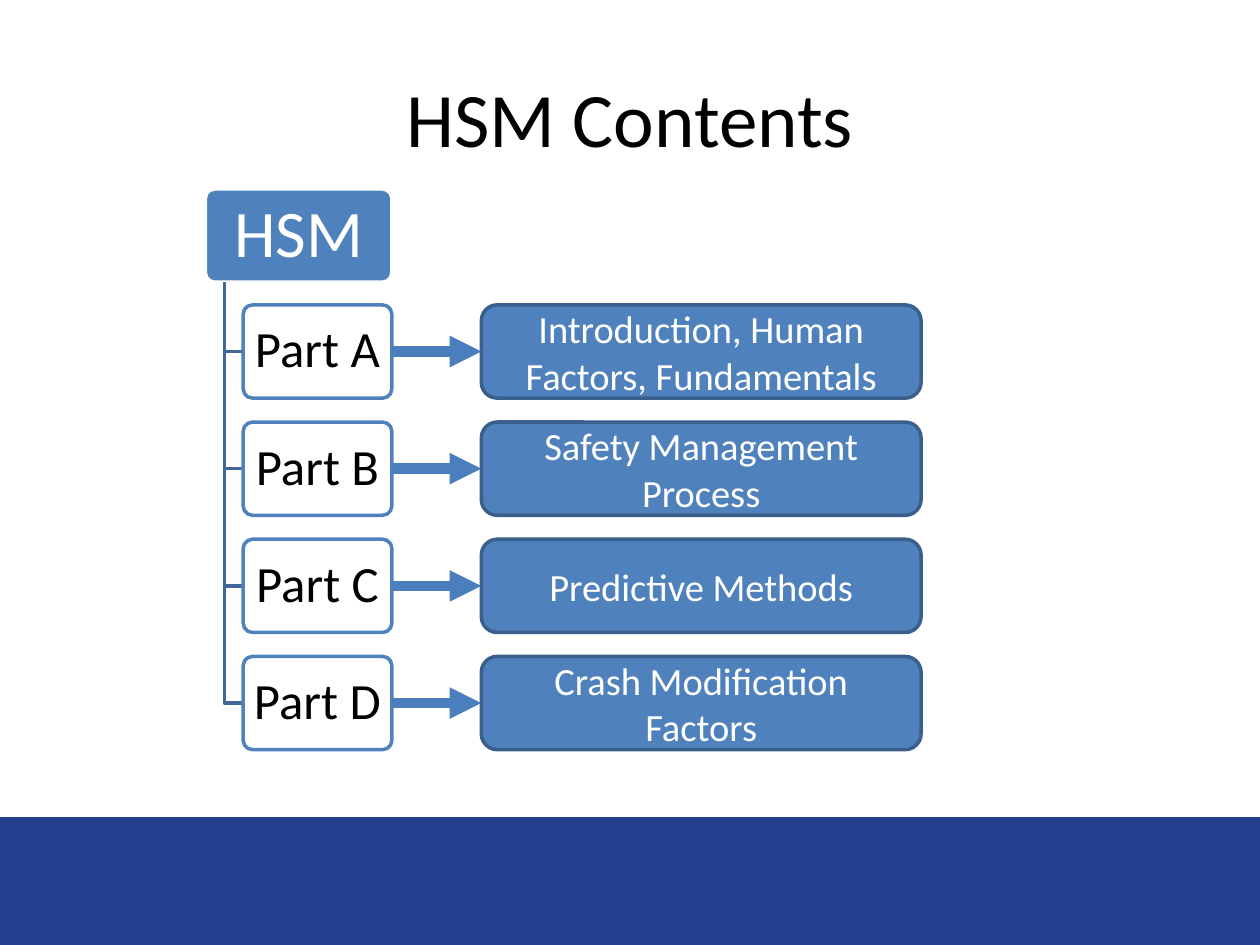
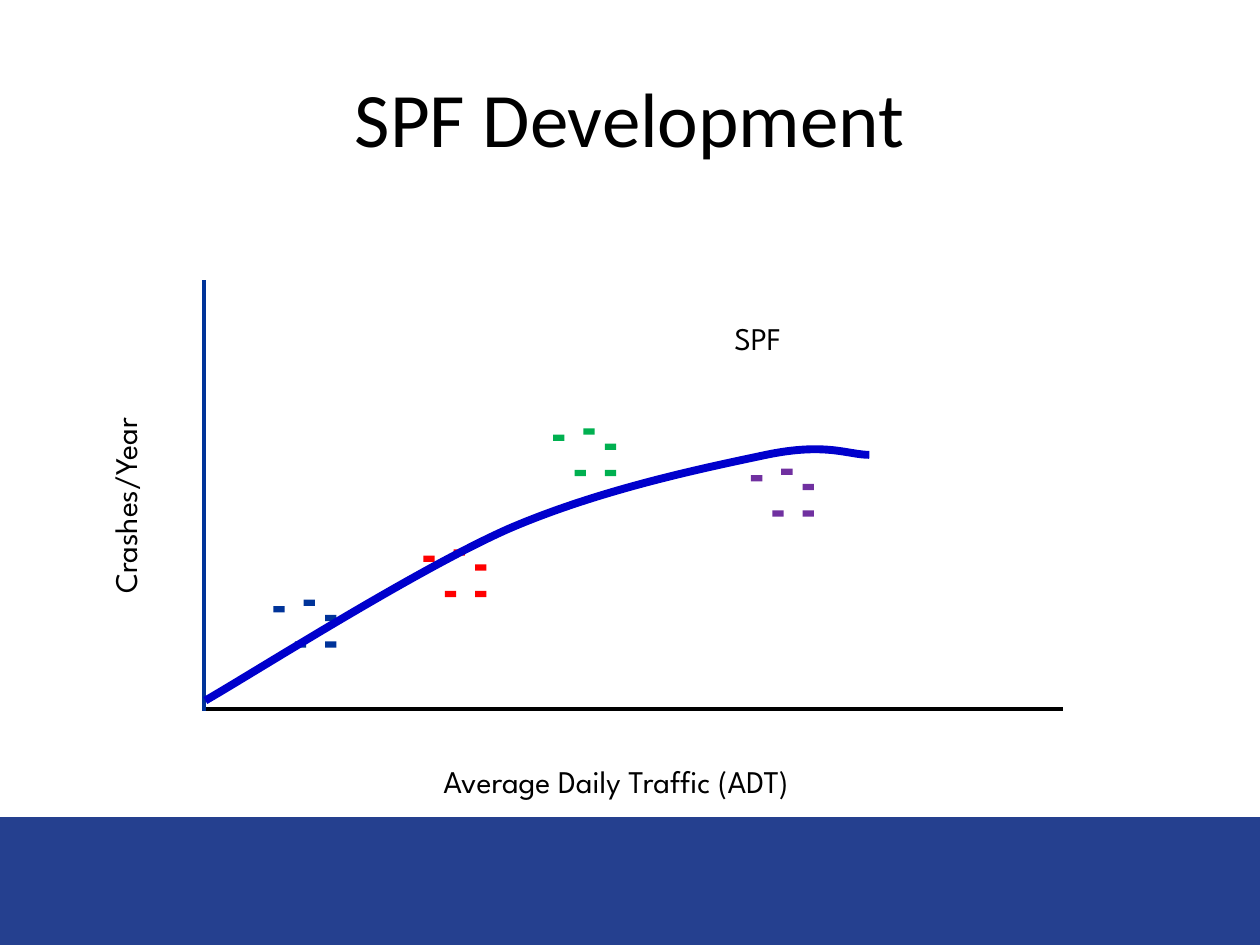
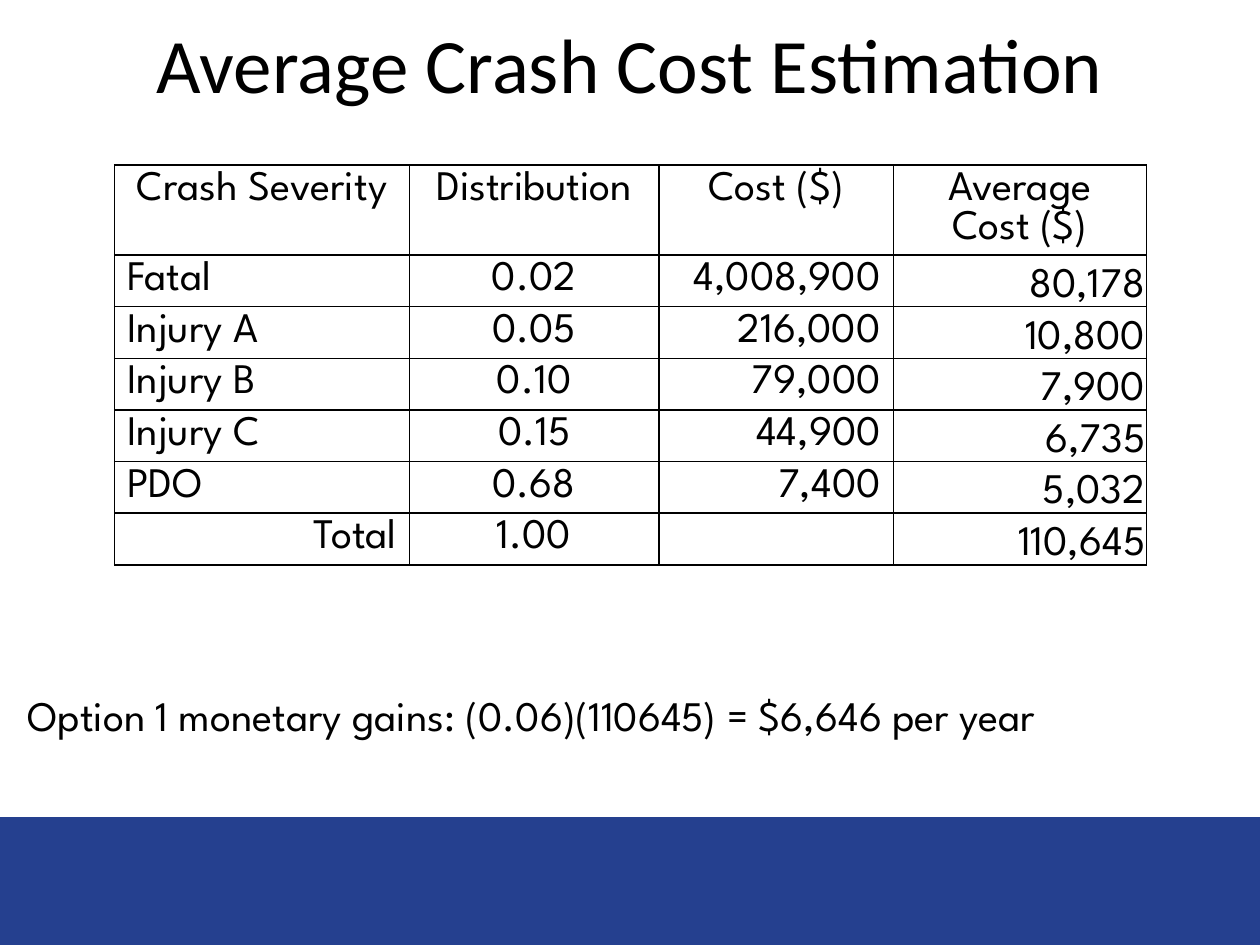
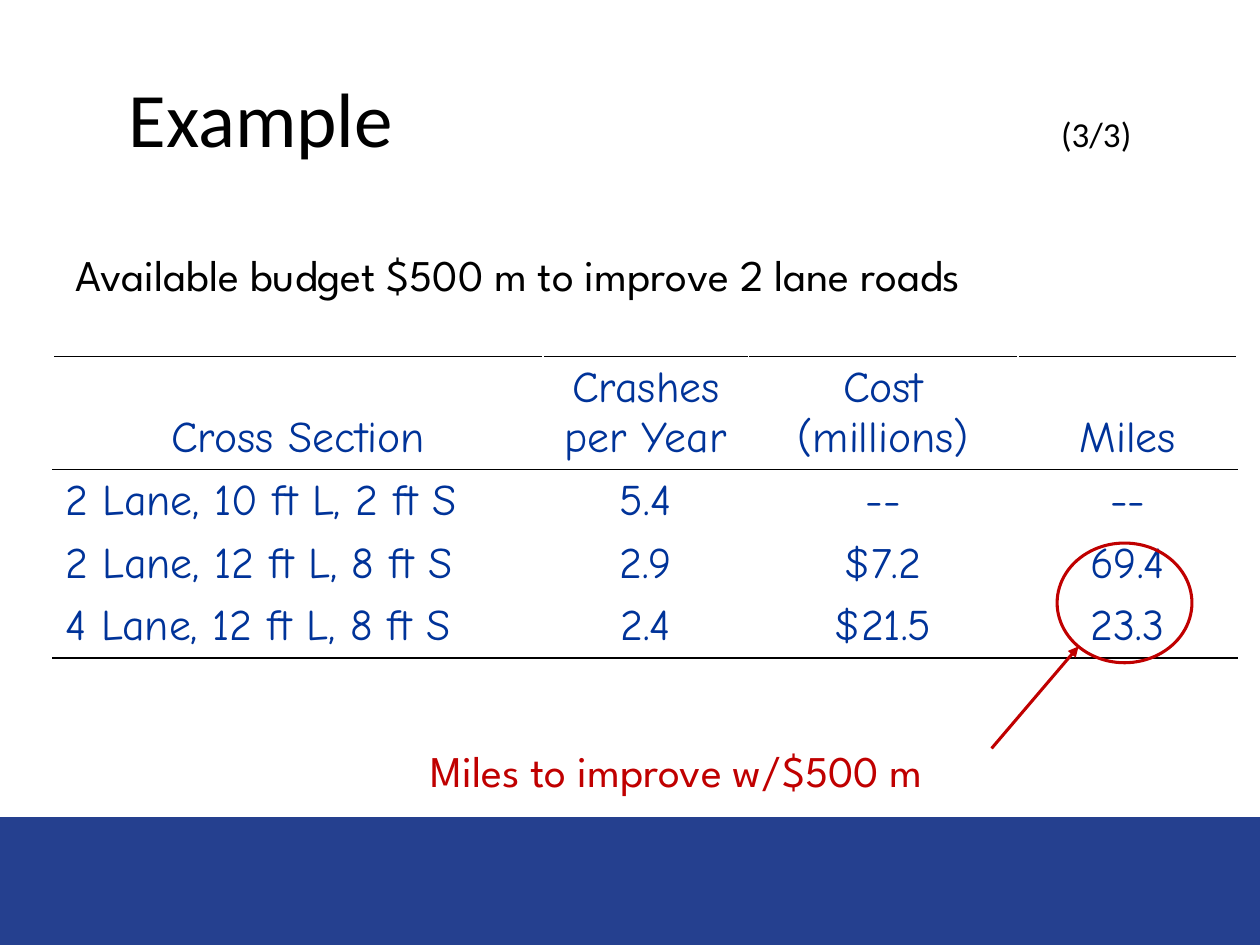
from dataclasses import dataclass
from itertools import accumulate

from lxml.etree import SubElement
from pptx import Presentation
from pptx.dml.color import RGBColor
from pptx.enum.shapes import MSO_CONNECTOR, MSO_SHAPE
from pptx.enum.text import MSO_ANCHOR, MSO_AUTO_SIZE, PP_ALIGN
from pptx.oxml.ns import qn
from pptx.util import Inches, Pt


@dataclass(frozen=True)
class Theme:
    title_font: str = "Calibri"
    body_font: str = "League Spartan"
    hand_font: str = "Comic Neue"
    black: str = "000000"
    white: str = "FFFFFF"
    band: str = "25408F"
    blue: str = "4F81BD"
    edge: str = "3A5F8C"
    branch: str = "3F6797"
    arrow: str = "4B7EBC"
    navy: str = "003399"
    curve: str = "0000CC"
    red: str = "C00000"
    title_size: int = 44
    page_size: int = 20
    root_size: int = 38
    part_size: int = 29
    topic_size: int = 22
    label_size: int = 18
    table_size: int = 24
    example_size: int = 25


THEME = Theme()
WIDTH, HEIGHT = 10, 7.5
BAND_TOP = 6.5
TITLE_BOX = (0.5, 0.3, 9, 1.25)
HIGH_TITLE_BOX = (0.5, 0.01, 9, 0.97)
LEFT, CENTER, RIGHT = PP_ALIGN.LEFT, PP_ALIGN.CENTER, PP_ALIGN.RIGHT

PARTS = [
    ("Part A", "Introduction, Human Factors, Fundamentals"),
    ("Part B", "Safety Management Process"),
    ("Part C", "Predictive Methods"),
    ("Part D", "Crash Modification Factors"),
]
ROOT_BOX = (1.63, 1.5, 1.48, 0.74)
TRUNK_X, PART_X, TOPIC_X = 1.78, 1.93, 3.82
PART_WIDTH, TOPIC_WIDTH, ROW_HEIGHT = 1.18, 3.49, 0.74
FIRST_ROW, ROW_PITCH = 2.42, 0.93

SITE_PATTERN = [(0, 0.05), (0.24, 0), (0.17, 0.33), (0.41, 0.12), (0.41, 0.33)]
SITE_CLUSTERS = [
    (2.17, 4.76, THEME.navy),
    (3.36, 4.36, "FF0000"),
    (4.39, 3.4, "00B050"),
    (5.96, 3.72, "7030A0"),
]
SITE_SIZE = (0.09, 0.05)
CURVE_START = (1.63, 5.56)
CURVE_POINTS = [
    (2.03, 5.33), (3.29, 4.53), (4.03, 4.2),
    (4.77, 3.88), (5.61, 3.71), (6.08, 3.61),
    (6.56, 3.51), (6.73, 3.61), (6.9, 3.61),
]
CHART_LABELS = [
    ("Average Daily Traffic (ADT)", (3.42, 6, 3.48, 0.4), 0),
    ("Crashes/Year", (0.07, 3.69, 1.84, 0.4), 270),
    ("SPF", (5.73, 2.48, 0.64, 0.44), 0),
]

COST_ROWS = [
    ("Crash Severity", "Distribution", "Cost ($)", "Average Cost ($)"),
    ("Fatal", "0.02", "4,008,900", "80,178"),
    ("Injury A", "0.05", "216,000", "10,800"),
    ("Injury B", "0.10", "79,000", "7,900"),
    ("Injury C", "0.15", "44,900", "6,735"),
    ("PDO", "0.68", "7,400", "5,032"),
    ("Total", "1.00", "", "110,645"),
]
COST_COLUMNS = (2.34, 1.98, 1.86, 2.01)
GAINS = "Option 1 monetary gains: (0.06)(110645) = $6,646 per year"

MILES_ROWS = [
    ("Cross Section", "Crashes per Year", "Cost\n(millions)", "Miles"),
    ("2 Lane, 10 ft L, 2 ft S", "5.4", "--", "--"),
    ("2 Lane, 12 ft L, 8 ft S", "2.9", "$7.2", "69.4"),
    ("4 Lane, 12 ft L, 8 ft S", "2.4", "$21.5", "23.3"),
]
MILES_COLUMNS = (3.89, 1.63, 2.14, 1.74)


def inches(values):
    return [Inches(value) for value in values]


def color(code):
    return RGBColor.from_string(code)


def add_span(para, text, size, font, code):
    span = para.add_run()
    span.text = text
    span.font.size = Pt(size)
    span.font.name = font
    span.font.color.rgb = color(code)


def write(frame, text, size, font, code, align=LEFT):
    for index, line in enumerate(text.split("\n")):
        para = frame.add_paragraph() if index else frame.paragraphs[0]
        para.alignment = align
        if line:
            add_span(para, line, size, font, code)


def paint(shape, fill=None, line=None, width=2):
    shape.shadow.inherit = False
    if fill:
        shape.fill.solid()
        shape.fill.fore_color.rgb = color(fill)
    else:
        shape.fill.background()
    if line:
        shape.line.color.rgb = color(line)
        shape.line.width = Pt(width)
    else:
        shape.line.fill.background()


def add_shape(page, kind, bounds, fill=None, line=None, width=2):
    shape = page.shapes.add_shape(kind, *inches(bounds))
    paint(shape, fill, line, width)
    return shape


def add_node(page, bounds, text, size, code, fill, line, rounding, inset, spacing):
    node = add_shape(page, MSO_SHAPE.ROUNDED_RECTANGLE, bounds, fill, line)
    node.adjustments[0] = rounding
    frame = node.text_frame
    frame.word_wrap = True
    frame.vertical_anchor = MSO_ANCHOR.MIDDLE
    frame.margin_left = frame.margin_right = Inches(inset)
    frame.margin_top = frame.margin_bottom = Inches(0.05)
    write(frame, text, size, THEME.title_font, code, CENTER)
    frame.paragraphs[0].line_spacing = spacing
    return node


def add_line(page, start, end, code, width, arrow=False):
    line = page.shapes.add_connector(MSO_CONNECTOR.STRAIGHT, *inches(start + end))
    line.line.color.rgb = color(code)
    line.line.width = Pt(width)
    properties = line._element.spPr
    if arrow:
        SubElement(properties.find(qn("a:ln")), qn("a:tailEnd"), type="triangle")
    SubElement(properties, qn("a:effectLst"))
    return line


def add_outline(page, start, points, code, width):
    builder = page.shapes.build_freeform(*inches(start))
    builder.add_line_segments([inches(point) for point in points], close=False)
    outline = builder.convert_to_shape()
    paint(outline, line=code, width=width)
    return outline


def bend(outline):
    segments = list(outline._element.iter(qn("a:lnTo")))
    track = segments[0].getparent()
    for first in range(0, len(segments), 3):
        curve = SubElement(track, qn("a:cubicBezTo"))
        for segment in segments[first:first + 3]:
            curve.append(segment[0])
            track.remove(segment)


def add_text(page, text, bounds, size, code=THEME.black, wrap=False, rotation=0):
    box = page.shapes.add_textbox(*inches(bounds))
    box.rotation = rotation
    box.text_frame.word_wrap = wrap
    box.text_frame.auto_size = MSO_AUTO_SIZE.SHAPE_TO_FIT_TEXT
    write(box.text_frame, text, size, THEME.body_font, code)


def set_borders(cell, codes):
    properties = cell._tc.get_or_add_tcPr()
    for side, code in zip("LRTB", codes):
        border = SubElement(properties, qn(f"a:ln{side}"), w=str(Pt(1)))
        fill = SubElement(border, qn("a:solidFill"))
        SubElement(fill, qn("a:srgbClr"), val=code)


def add_table(page, corner, rows, columns, heights, size, font, code, style_cell):
    bounds = (*corner, sum(columns), sum(heights))
    table = page.shapes.add_table(len(rows), len(columns), *inches(bounds)).table
    table.first_row = table.horz_banding = False
    for column, width in zip(table.columns, columns):
        column.width = Inches(width)
    for row, height in zip(table.rows, heights):
        row.height = Inches(height)
    for r, values in enumerate(rows):
        for c, value in enumerate(values):
            cell = table.cell(r, c)
            align, borders = style_cell(cell, r, c)
            set_borders(cell, borders)
            cell.fill.solid()
            cell.fill.fore_color.rgb = color(THEME.white)
            write(cell.text_frame, value, size, font, code, align)


def style_cost_cell(cell, row, column):
    align = CENTER if row == 0 else (LEFT, CENTER, RIGHT, RIGHT)[column]
    if row == len(COST_ROWS) - 1 and column == 0:
        align = RIGHT
    if row and column == 3:
        cell.vertical_anchor = MSO_ANCHOR.BOTTOM
        cell.margin_left = cell.margin_right = cell.margin_top = Inches(0.01)
        cell.margin_bottom = 0
    return align, [THEME.black] * 4


def style_miles_cell(cell, row, column):
    if row == 0 and column != 2:
        cell.vertical_anchor = MSO_ANCHOR.BOTTOM
    top = THEME.black if row < 2 else THEME.white
    bottom = THEME.black if row in (0, len(MILES_ROWS) - 1) else THEME.white
    align = LEFT if row and column == 0 else CENTER
    return align, (THEME.white, THEME.white, top, bottom)


def add_page(deck, title, bounds=TITLE_BOX):
    page = deck.slides.add_slide(deck.slide_layouts[5])
    holder = page.shapes.title
    holder.left, holder.top, holder.width, holder.height = inches(bounds)
    holder.text_frame.vertical_anchor = MSO_ANCHOR.MIDDLE
    write(holder.text_frame, title, THEME.title_size, THEME.title_font, THEME.black, CENTER)
    return page


def add_master_band(deck, page):
    bounds = (0, BAND_TOP, WIDTH, HEIGHT - BAND_TOP)
    band = add_shape(page, MSO_SHAPE.RECTANGLE, bounds, THEME.band, THEME.band)
    deck.slide_master.shapes._spTree.insert(2, band._element)


def build_contents(deck):
    page = add_page(deck, "HSM Contents")
    add_master_band(deck, page)
    add_node(page, ROOT_BOX, "HSM", THEME.root_size, THEME.white,
             THEME.blue, THEME.white, 0.1, 0.08, 0.9)
    root_bottom = ROOT_BOX[1] + ROOT_BOX[3]
    for index, (part, topic) in enumerate(PARTS):
        top = FIRST_ROW + index * ROW_PITCH
        middle = top + ROW_HEIGHT / 2
        add_outline(page, (TRUNK_X, root_bottom),
                    [(TRUNK_X, middle), (PART_X, middle)], THEME.branch, 2)
        part_node = add_node(page, (PART_X, top, PART_WIDTH, ROW_HEIGHT), part,
                             THEME.part_size, THEME.black, THEME.white, THEME.blue,
                             0.1, 0.05, 0.9)
        topic_node = add_node(page, (TOPIC_X, top, TOPIC_WIDTH, ROW_HEIGHT), topic,
                              THEME.topic_size, THEME.white, THEME.blue, THEME.edge,
                              0.17, 0.1, 1.0)
        arrow = add_line(page, (PART_X + PART_WIDTH, middle), (TOPIC_X, middle),
                         THEME.arrow, 6, arrow=True)
        arrow.begin_connect(part_node, 3)
        arrow.end_connect(topic_node, 1)


def build_development(deck):
    page = add_page(deck, "SPF Development")
    add_line(page, (1.62, 5.63), (8.44, 5.63), THEME.black, 2.25)
    add_line(page, (1.62, 5.64), (1.62, 2.22), THEME.navy, 2.25)
    for left, top, code in SITE_CLUSTERS:
        for across, down in SITE_PATTERN:
            add_shape(page, MSO_SHAPE.RECTANGLE,
                      (left + across, top + down, *SITE_SIZE), code)
    bend(add_outline(page, CURVE_START, CURVE_POINTS, THEME.curve, 4.5))
    for text, bounds, rotation in CHART_LABELS:
        add_text(page, text, bounds, THEME.label_size, rotation=rotation)


def build_costs(deck):
    page = add_page(deck, "Average Crash Cost Estimation", HIGH_TITLE_BOX)
    heights = [0.61] + [0.41] * (len(COST_ROWS) - 1)
    add_table(page, (0.91, 1.31), COST_ROWS, COST_COLUMNS, heights,
              THEME.table_size, THEME.body_font, THEME.black, style_cost_cell)
    add_text(page, GAINS, (0.12, 5.42, 9.85, 0.5), THEME.table_size)


def build_example(deck):
    page = add_page(deck, "Example\t")
    frame = page.shapes.title.text_frame
    frame.margin_left = Inches(0.52)
    para = frame.paragraphs[0]
    para.alignment = LEFT
    stops = SubElement(para._p.get_or_add_pPr(), qn("a:tabLst"))
    SubElement(stops, qn("a:tab"), pos=str(Inches(7.96)), algn="r")
    add_span(para, "(3/3)", THEME.page_size, THEME.title_font, THEME.black)

    heights = [0.63] + [0.41] * (len(MILES_ROWS) - 1)
    add_table(page, (0.42, 2.83), MILES_ROWS, MILES_COLUMNS, heights,
              THEME.example_size, THEME.hand_font, THEME.navy, style_miles_cell)
    add_text(page, "Available budget $500 m to improve 2 lane roads",
             (0.5, 1.92, 8.85, 0.52), THEME.example_size, wrap=True)
    add_shape(page, MSO_SHAPE.OVAL, (8.39, 4.31, 1.07, 0.95), line=THEME.red, width=1.75)
    add_line(page, (7.87, 5.94), (8.56, 5.13), THEME.red, 1.75, arrow=True)
    add_text(page, "Miles to improve w/$500 m", (3.32, 5.85, 4.7, 0.52),
             THEME.example_size, THEME.red, wrap=True)


def main():
    deck = Presentation()
    deck.slide_width, deck.slide_height = inches((WIDTH, HEIGHT))
    for build in (build_contents, build_development, build_costs, build_example):
        build(deck)
    deck.save("out.pptx")


if __name__ == "__main__":
    main()
